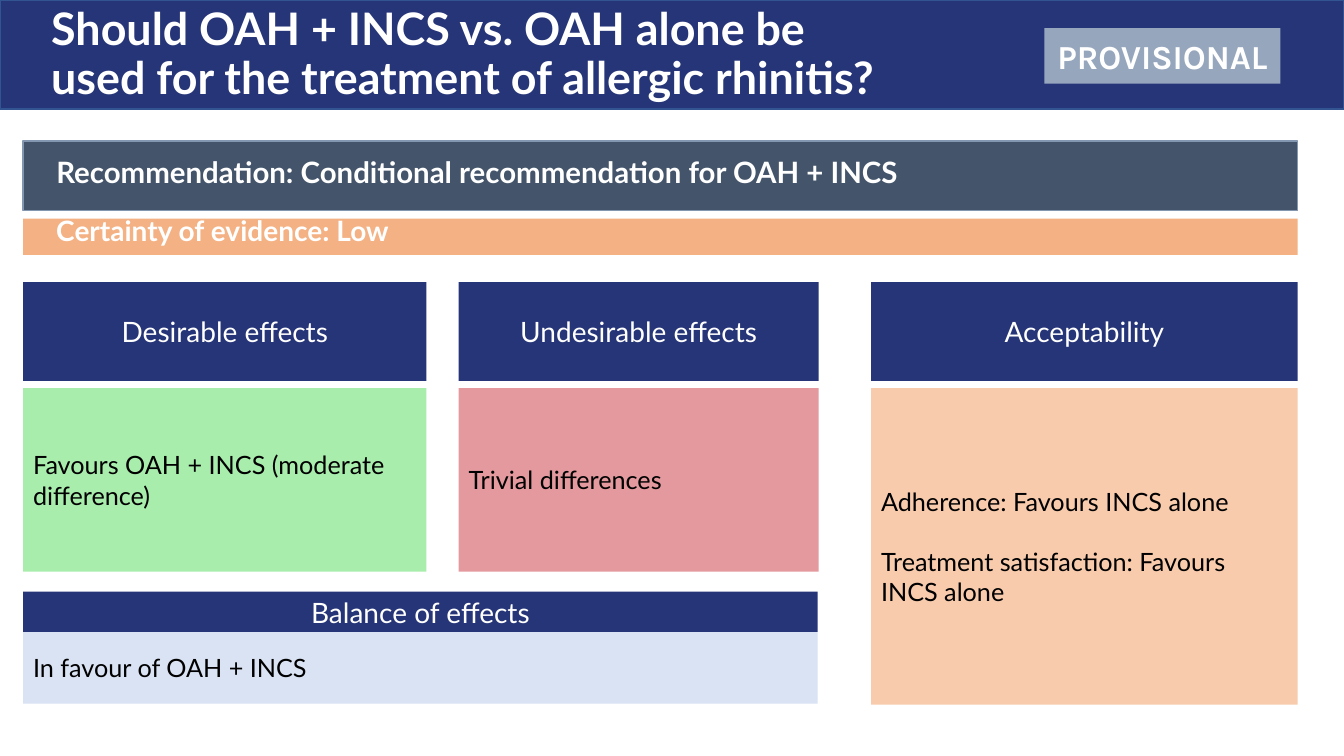
"""Build a recommendation summary slide for allergic rhinitis treatment."""
import pptx
import pptx.dml.color
import pptx.enum.shapes
import pptx.enum.text
import pptx.util

Inches = pptx.util.Inches
ALIGN = pptx.enum.text.PP_ALIGN
ANCHOR = pptx.enum.text.MSO_ANCHOR
NAVY, WHITE, BLACK = "263578", "FFFFFF", "000000"


def color(value):
    return pptx.dml.color.RGBColor.from_string(value)


def write(shape, lines, ink, align=ALIGN.LEFT, anchor=ANCHOR.MIDDLE, **font):
    frame = shape.text_frame
    frame.word_wrap = True
    frame.vertical_anchor = anchor
    for index, line in enumerate(lines):
        paragraph = frame.add_paragraph() if index else frame.paragraphs[0]
        paragraph.alignment = align
        if index:
            paragraph.space_before = pptx.util.Pt(21.6)
        run = paragraph.add_run()
        run.text = line
        run.font.color.rgb = color(ink)
        for name, value in ({"name": "Lato"} | font).items():
            setattr(run.font, name, pptx.util.Pt(value) if name == "size" else value)


presentation = pptx.Presentation()
presentation.slide_width = Inches(13.33)
presentation.slide_height = Inches(7.5)
slide = presentation.slides.add_slide(presentation.slide_layouts[6])

header = {"ink": WHITE, "size": 20, "align": ALIGN.CENTER}
body = {"ink": BLACK, "size": 18}
badge = {"ink": WHITE, "size": 24, "align": ALIGN.CENTER, "name": "Karla", "bold": True}

boxes = [
    (0, 0, 13.33, 1.08, NAVY, "325491", [], body),
    (0.23, 1.4, 12.64, 0.69, "44546A", "8497B0", [], body),
    (0.23, 2.17, 12.64, 0.36, "F4B183", None, [], body),
    (0.23, 6.27, 7.88, 0.71, "DAE3F3", None, ["In favour of OAH + INCS"], body),
    (0.23, 5.87, 7.88, 0.4, NAVY, None, ["Balance of effects"], header),
    (10.36, 0.28, 2.34, 0.55, "96A6BC", None, ["PROVISIONAL"], badge),
]
columns = [
    (0.23, 4, 1.82, "A9EDAD", "Desirable effects",
     ["Favours OAH + INCS (moderate difference)"]),
    (4.55, 3.57, 1.82, "E3999E", "Undesirable effects", ["Trivial differences"]),
    (8.64, 4.23, 3.14, "F8CBAD", "Acceptability",
     ["Adherence: Favours INCS alone", "Treatment satisfaction: Favours INCS alone"]),
]
for left, width, height, fill, heading, lines in columns:
    boxes.append((left, 2.8, width, 0.98, NAVY, None, [heading], header))
    boxes.append((left, 3.85, width, height, fill, None, lines, body))

for left, top, width, height, fill, outline, lines, style in boxes:
    shape = slide.shapes.add_shape(
        pptx.enum.shapes.MSO_SHAPE.RECTANGLE,
        Inches(left), Inches(top), Inches(width), Inches(height))
    shape.shadow.inherit = False
    shape.fill.solid()
    shape.fill.fore_color.rgb = color(fill)
    if outline:
        shape.line.color.rgb = color(outline)
        shape.line.width = pptx.util.Pt(1)
    else:
        shape.line.fill.background()
    write(shape, lines, **style)

captions = [
    (0.41, 0.01, 8.4, 1.08, 32, ANCHOR.MIDDLE, 0.9,
     "Should OAH + INCS vs. OAH alone be used for the treatment of allergic rhinitis?"),
    (0.46, 1.48, 12.42, 0.56, 21, ANCHOR.TOP, 1.0,
     "Recommendation: Conditional recommendation for OAH + INCS"),
    (0.46, 2.07, 11.54, 0.54, 20, ANCHOR.TOP, 1.0, "Certainty of evidence: Low"),
]
for left, top, width, height, size, anchor, spacing, text in captions:
    caption = slide.shapes.add_textbox(
        Inches(left), Inches(top), Inches(width), Inches(height))
    write(caption, [text], WHITE, anchor=anchor, size=size, bold=True)
    caption.text_frame.paragraphs[0].line_spacing = spacing

presentation.save("out.pptx")
